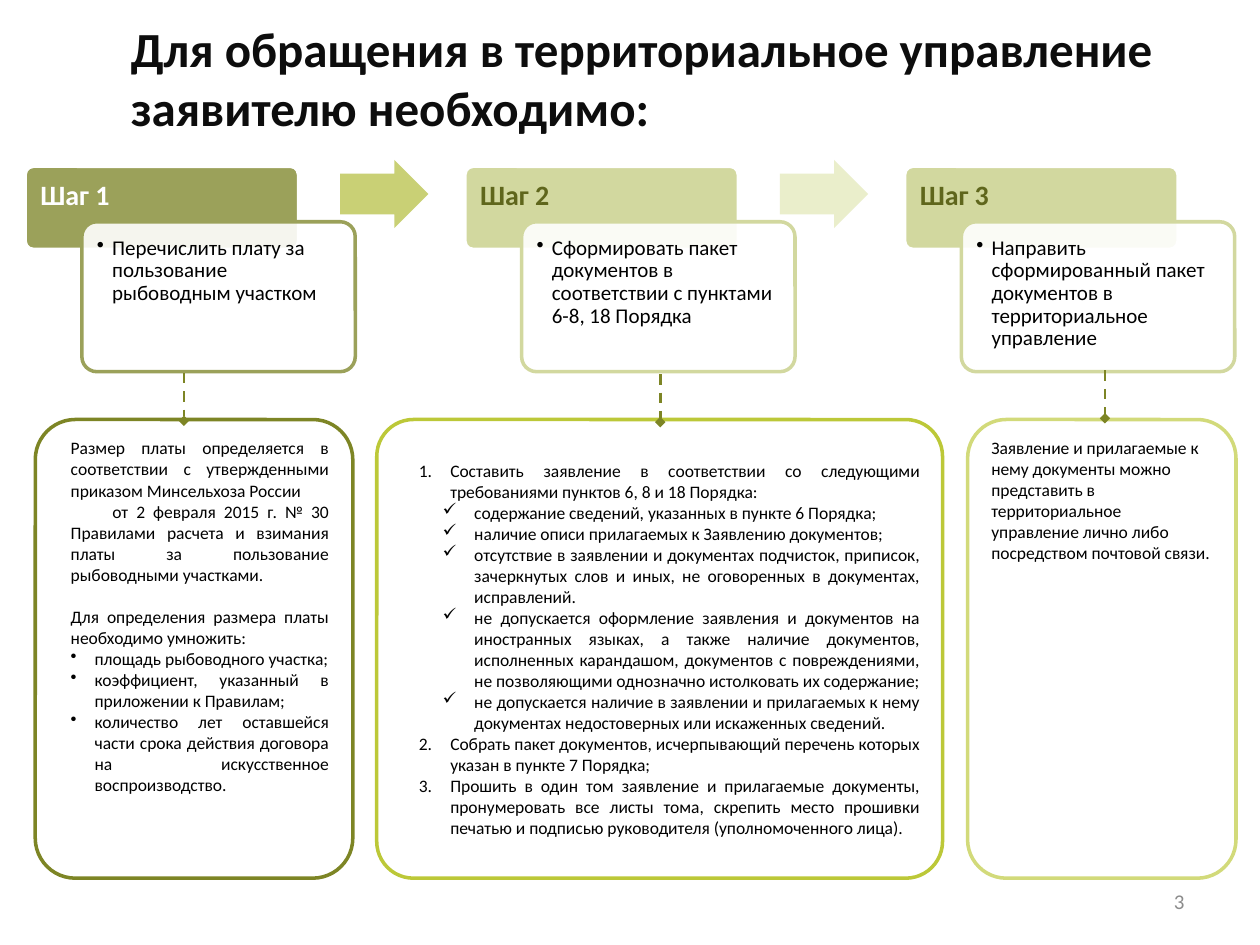
from dataclasses import dataclass, field
from typing import Optional

from lxml import etree
from pptx import Presentation
from pptx import util as u
from pptx.dml.color import RGBColor
from pptx.enum import dml, shapes, text
from pptx.oxml.ns import qn

FONT = "Calibri"
COLORS = {
    "white": "FFFFFF", "black": "000000", "title": "0D0D0D", "number": "8C8C8C",
    "olive": "9BA15A", "pale": "D2D89F", "dark": "5F661C", "deep": "7D8525",
    "lime": "BCC838", "soft": "D2DA7A", "arrow": "C9D075", "faint": "EAEECB",
}
LEFT, JUSTIFY, RIGHT = text.PP_ALIGN.LEFT, text.PP_ALIGN.JUSTIFY, text.PP_ALIGN.RIGHT
TOP, MIDDLE = text.MSO_ANCHOR.TOP, text.MSO_ANCHOR.MIDDLE
NUMBERED = "arabicPeriod"


@dataclass
class Line:
    words: str
    margin: float = 0
    indent: float = 0
    bullet: str = ""
    level: int = 0
    align: text.PP_ALIGN = JUSTIFY
    before: float = 0
    spacing: Optional[float] = None


@dataclass
class Style:
    size: float
    color: str = "black"
    bold: bool = False
    anchor: text.MSO_ANCHOR = TOP
    insets: tuple = (0.1, 0.05, 0.1, 0.05)


@dataclass
class Step:
    name: str
    task: str
    tab: str
    label: str
    arrow: str = ""


@dataclass
class Panel:
    left: float
    width: float
    corner: float
    line: str
    link_x: float
    link_top: float
    lines: list = field(default_factory=list)
    anchor: text.MSO_ANCHOR = TOP


def rgb(name: str) -> RGBColor:
    return RGBColor.from_string(COLORS[name])


def write(box, lines: list, style: Style) -> None:
    frame = box.text_frame
    frame.word_wrap = True
    frame.vertical_anchor = style.anchor
    (frame.margin_left, frame.margin_top,
     frame.margin_right, frame.margin_bottom) = map(u.Inches, style.insets)
    for index, line in enumerate(lines):
        para = frame.add_paragraph() if index else frame.paragraphs[0]
        para.level = line.level
        para.alignment = line.align
        para.space_before = u.Pt(line.before)
        para.line_spacing = line.spacing
        props = para._p.get_or_add_pPr()
        props.set("marL", str(u.Inches(line.margin)))
        props.set("indent", str(u.Inches(line.indent)))
        if line.bullet == NUMBERED:
            etree.SubElement(props, qn("a:buAutoNum"), type=NUMBERED)
        elif line.bullet:
            etree.SubElement(props, qn("a:buChar"), char=line.bullet)
        else:
            etree.SubElement(props, qn("a:buNone"))
        span = para.add_run()
        span.text = line.words
        span.font.name = FONT
        span.font.size = u.Pt(style.size)
        span.font.bold = style.bold
        span.font.color.rgb = rgb(style.color)


def add_text(page, at: tuple, lines: list, style: Style) -> None:
    write(page.shapes.add_textbox(*map(u.Inches, at)), lines, style)


def add_block(page, kind, at: tuple, fill: str, line: str = "", adjust: tuple = (),
              opacity: int = 100):
    block = page.shapes.add_shape(kind, *map(u.Inches, at))
    block.shadow.inherit = False
    for index, value in enumerate(adjust):
        block.adjustments[index] = value
    block.fill.solid()
    block.fill.fore_color.rgb = rgb(fill)
    if opacity < 100:
        color = block._element.spPr.find(qn("a:solidFill"))[0]
        etree.SubElement(color, qn("a:alpha"), val=str(opacity * 1000))
    if line:
        block.line.color.rgb = rgb(line)
        block.line.width = u.Pt(2)
    else:
        block.line.fill.background()
    return block


def add_link(page, x: float, top: float) -> None:
    """Draw a dashed drop line that ends in a diamond."""
    link = page.shapes.add_connector(
        shapes.MSO_CONNECTOR.STRAIGHT, *map(u.Inches, (x, top, x, top + 0.38)))
    link.line.color.rgb = rgb("deep")
    link.line.width = u.Pt(1.5)
    link.line.dash_style = dml.MSO_LINE.DASH
    etree.SubElement(link.line._get_or_add_ln(), qn("a:tailEnd"), type="diamond")
    etree.SubElement(link._element.spPr, qn("a:effectLst"))


def add_step(page, step: Step, left: float) -> None:
    rounded = shapes.MSO_SHAPE.ROUNDED_RECTANGLE
    add_block(page, rounded, (left, 1.32, 2.17, 0.66), step.tab, "white", (0.1,))
    add_text(page, (left, 1.32, 2.17, 0.44), [Line(step.name, align=LEFT, spacing=0.9)],
             Style(16, step.label, True, insets=(0.12, 0.12, 0.12, 0.07)))
    add_block(page, rounded, (left + 0.45, 1.76, 2.17, 1.19), "white", step.tab, (0.1,), 90)
    add_text(page, (left + 0.48, 1.79, 2.1, 1.12),
             [Line(step.task, 0.12, -0.12, "•", align=LEFT, spacing=0.9)],
             Style(12, insets=(0.09,) * 4))
    if step.arrow:
        add_block(page, shapes.MSO_SHAPE.RIGHT_ARROW, (left + 2.5, 1.27, 0.7, 0.54),
                  step.arrow, adjust=(0.6, 0.5))


def add_panel(page, panel: Panel) -> None:
    block = add_block(page, shapes.MSO_SHAPE.ROUNDED_RECTANGLE,
                      (panel.left, 3.33, panel.width, 3.64), "white", panel.line,
                      (panel.corner,))
    write(block, panel.lines, Style(10, anchor=panel.anchor))
    add_link(page, panel.link_x, panel.link_top)


def numbered(words: str) -> Line:
    return Line(words, 0.4, -0.25, NUMBERED)


def checked(words: str) -> Line:
    return Line(words, 0.59, -0.25, "✓", level=1)


def dotted(words: str) -> Line:
    return Line(words, 0.28, -0.19, "•")


STEPS = [
    Step("Шаг 1", "Перечислить плату за пользование рыбоводным участком",
         "olive", "white", "arrow"),
    Step("Шаг 2", "Сформировать пакет документов в соответствии с пунктами 6-8, 18 Порядка",
         "pale", "dark", "faint"),
    Step("Шаг 3", "Направить сформированный пакет документов в территориальное управление",
         "pale", "dark"),
]
PANELS = [
    Panel(0.28, 2.52, 0.126, "deep", 1.46, 2.96, [
        Line("Размер платы определяется в соответствии с утвержденными приказом "
             "Минсельхоза России", 0.09),
        Line("от 2 февраля 2015 г. № 30 Правилами расчета и взимания платы за "
             "пользование рыбоводными участками.", 0.09, 0.33),
        Line("Для определения размера платы необходимо умножить:", 0.09, before=12),
        dotted("площадь рыбоводного участка;"),
        dotted("коэффициент, указанный в приложении к Правилам;"),
        dotted("количество лет оставшейся части срока действия договора на "
               "искусственное воспроизводство."),
    ]),
    Panel(2.99, 4.49, 0.08, "lime", 5.24, 2.97, [
        numbered("Составить заявление в соответствии со следующими требованиями "
                 "пунктов 6, 8 и 18 Порядка:"),
        checked("содержание сведений, указанных в пункте 6 Порядка;"),
        checked("наличие описи прилагаемых к Заявлению документов;"),
        checked("отсутствие в заявлении и документах подчисток, приписок, зачеркнутых "
                "слов и иных, не оговоренных в документах, исправлений."),
        checked("не допускается оформление заявления и документов на иностранных языках, "
                "а также наличие документов, исполненных карандашом, документов с "
                "повреждениями, не позволяющими однозначно истолковать их содержание;"),
        checked("не допускается наличие в заявлении и прилагаемых к нему документах "
                "недостоверных или искаженных сведений."),
        numbered("Собрать пакет документов, исчерпывающий перечень которых указан в "
                 "пункте 7 Порядка;"),
        numbered("Прошить в один том заявление и прилагаемые документы, пронумеровать все "
                 "листы тома, скрепить место прошивки печатью и подписью руководителя "
                 "(уполномоченного лица)."),
    ], MIDDLE),
    Panel(7.68, 2.13, 0.144, "soft", 8.77, 2.94, [
        Line("Заявление и прилагаемые к нему документы можно представить в территориальное "
             "управление лично либо посредством почтовой связи.", align=LEFT),
    ]),
]


def main() -> None:
    deck = Presentation()
    deck.slide_width, deck.slide_height = u.Inches(10), u.Inches(7.5)
    page = deck.slides.add_slide(deck.slide_layouts[6])
    add_text(page, (0.94, 0.1, 9.06, 1.04),
             [Line("Для обращения в территориальное управление заявителю необходимо:",
                   align=LEFT)], Style(28, "title", True))
    for index, step in enumerate(STEPS):
        add_step(page, step, 0.2 + 3.49 * index)
    for panel in PANELS:
        add_panel(page, panel)
    add_text(page, (7.17, 6.95, 2.33, 0.4), [Line("3", align=RIGHT)],
             Style(12, "number", anchor=MIDDLE))
    deck.save("out.pptx")


if __name__ == "__main__":
    main()
